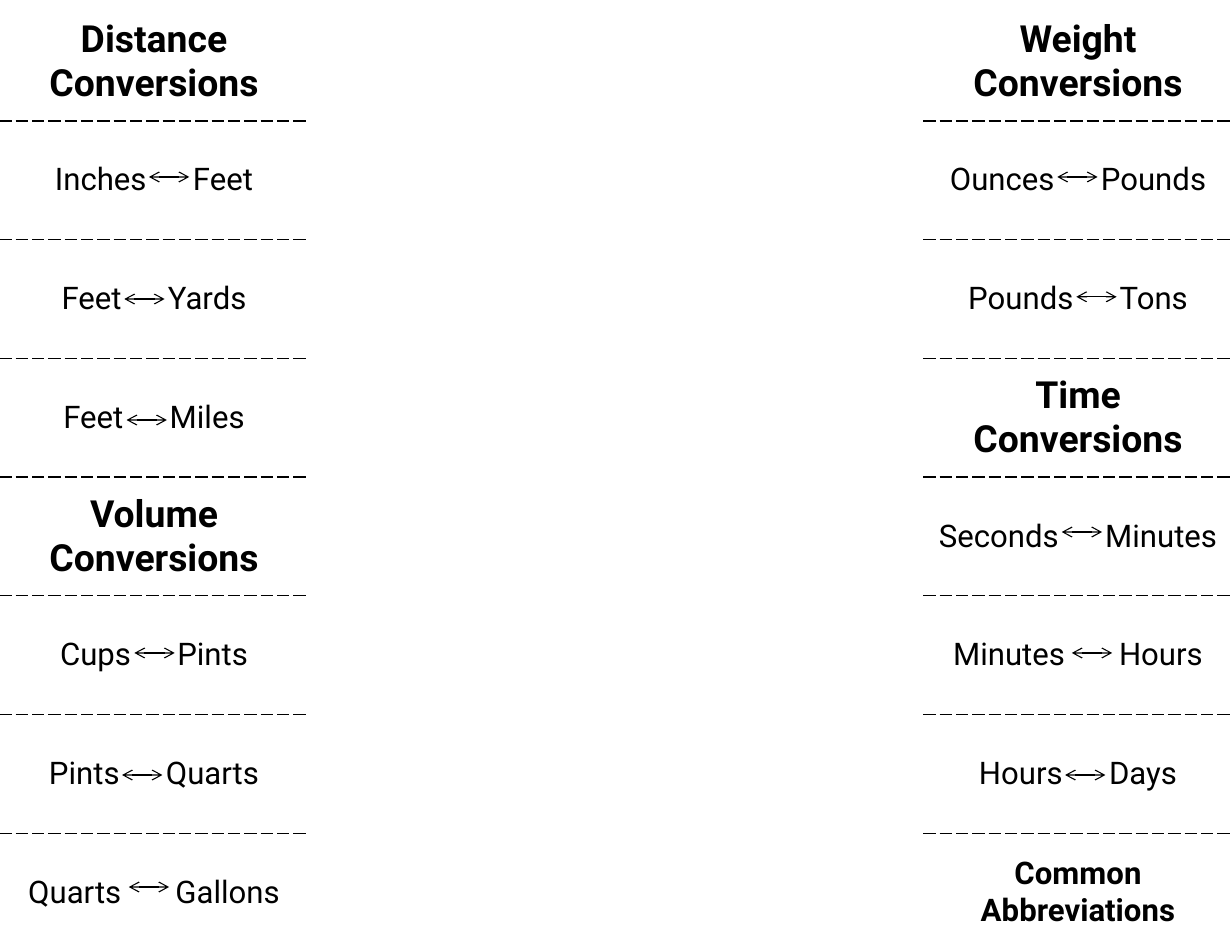
from lxml import etree
from pptx import Presentation
from pptx.dml.color import RGBColor
from pptx.enum.shapes import MSO_CONNECTOR
from pptx.enum.text import MSO_ANCHOR, PP_ALIGN
from pptx.oxml.ns import qn
from pptx.util import Inches, Pt

STRAIGHT = MSO_CONNECTOR.STRAIGHT
MIDDLE = MSO_ANCHOR.MIDDLE
CENTER = PP_ALIGN.CENTER

THEME = {"font": "Roboto", "ink": "000000", "heading": 24, "body": 20,
         "arrow": 0.75, "fold": 1, "space": 4.95}

HEADINGS = {
    (0, 0): ("Distance Conversions", THEME["heading"]),
    (4, 0): ("Volume Conversions", THEME["heading"]),
    (0, 3): ("Weight Conversions", THEME["heading"]),
    (3, 3): ("Time Conversions", THEME["heading"]),
    (7, 3): ("Common Abbreviations", THEME["body"]),
}

# (row, column): left unit, right unit, gap in spaces, arrow centre x, arrow y
PAIRS = {
    (1, 0): ("Inches", "Feet", 6, 1.51, 1.58),
    (2, 0): ("Feet", "Yards", 6, 1.29, 2.67),
    (3, 0): ("Feet", "Miles", 6, 1.31, 3.75),
    (5, 0): ("Cups", "Pints", 6, 1.38, 5.83),
    (6, 0): ("Pints", "Quarts", 6, 1.27, 6.92),
    (7, 0): ("Quarts", "Gallons", 7, 1.33, 7.92),
    (1, 3): ("Ounces", "Pounds", 6, 9.62, 1.58),
    (2, 3): ("Pounds", "Tons", 6, 9.79, 2.65),
    (4, 3): ("Seconds", "Minutes", 6, 9.66, 4.75),
    (5, 3): ("Minutes", "Hours", 7, 9.75, 5.83),
    (6, 3): ("Hours", "Days", 6, 9.69, 6.92),
}

ROWS, COLS = 8, 4
WIDTH, HEIGHT = 11, 8.5
TABLE_TOP = 0.02
ARROW_WIDTH = 0.36
FOLD_COLS = (0, 3)


def add_text(p, text, size=THEME["body"], bold=False, tracking=0):
    p.alignment = CENTER
    r = p.add_run()
    r.text = text
    r.font.name = THEME["font"]
    r.font.size = Pt(size)
    r.font.bold = bold
    r.font.color.rgb = RGBColor.from_string(THEME["ink"])
    if tracking:
        r.font._element.set("spc", str(round(tracking * 100)))


def add_border(cell, side):
    ln = etree.SubElement(cell._tc.get_or_add_tcPr(), qn(f"a:ln{side}"),
                          w=str(Pt(THEME["fold"])))
    fill = etree.SubElement(ln, qn("a:solidFill"))
    etree.SubElement(fill, qn("a:srgbClr"), val=THEME["ink"])
    etree.SubElement(ln, qn("a:prstDash"), val="lgDash")


def add_arrow(s, center, y):
    left, right = center - ARROW_WIDTH / 2, center + ARROW_WIDTH / 2
    line = s.shapes.add_connector(STRAIGHT, Inches(left), Inches(y),
                                  Inches(right), Inches(y))
    line.line.width = Pt(THEME["arrow"])
    line.line.color.rgb = RGBColor.from_string(THEME["ink"])
    ln = line.line._get_or_add_ln()
    for end in ("headEnd", "tailEnd"):
        etree.SubElement(ln, qn(f"a:{end}"), type="arrow")
    etree.SubElement(line._element.spPr, qn("a:effectLst"))


def add_grid(s):
    height = HEIGHT - TABLE_TOP
    table = s.shapes.add_table(ROWS, COLS, 0, Inches(TABLE_TOP),
                               Inches(WIDTH), Inches(height)).table
    table.first_row = False
    table.horz_banding = False
    for row in table.rows:
        row.height = Inches(height / ROWS)
    for i in range(ROWS):
        for j in range(COLS):
            cell = table.cell(i, j)
            cell.vertical_anchor = MIDDLE
            cell.margin_left = cell.margin_right = Inches(0.11)
            cell.margin_top = cell.margin_bottom = Inches(0.06)
            if j in FOLD_COLS:
                if i > 0:
                    add_border(cell, "T")
                if i < ROWS - 1:
                    add_border(cell, "B")
            cell.fill.background()
    return table


def main():
    prs = Presentation()
    prs.slide_width, prs.slide_height = Inches(WIDTH), Inches(HEIGHT)
    s = prs.slides.add_slide(prs.slide_layouts[6])
    table = add_grid(s)
    for (i, j), (text, size) in HEADINGS.items():
        add_text(table.cell(i, j).text_frame.paragraphs[0], text, size=size, bold=True)
    for (i, j), (left, right, gap, center, y) in PAIRS.items():
        p = table.cell(i, j).text_frame.paragraphs[0]
        add_text(p, left)
        add_text(p, " ", tracking=(gap - 1) * THEME["space"])
        add_text(p, right)
        add_arrow(s, center, y)
    prs.save("out.pptx")


if __name__ == "__main__":
    main()
